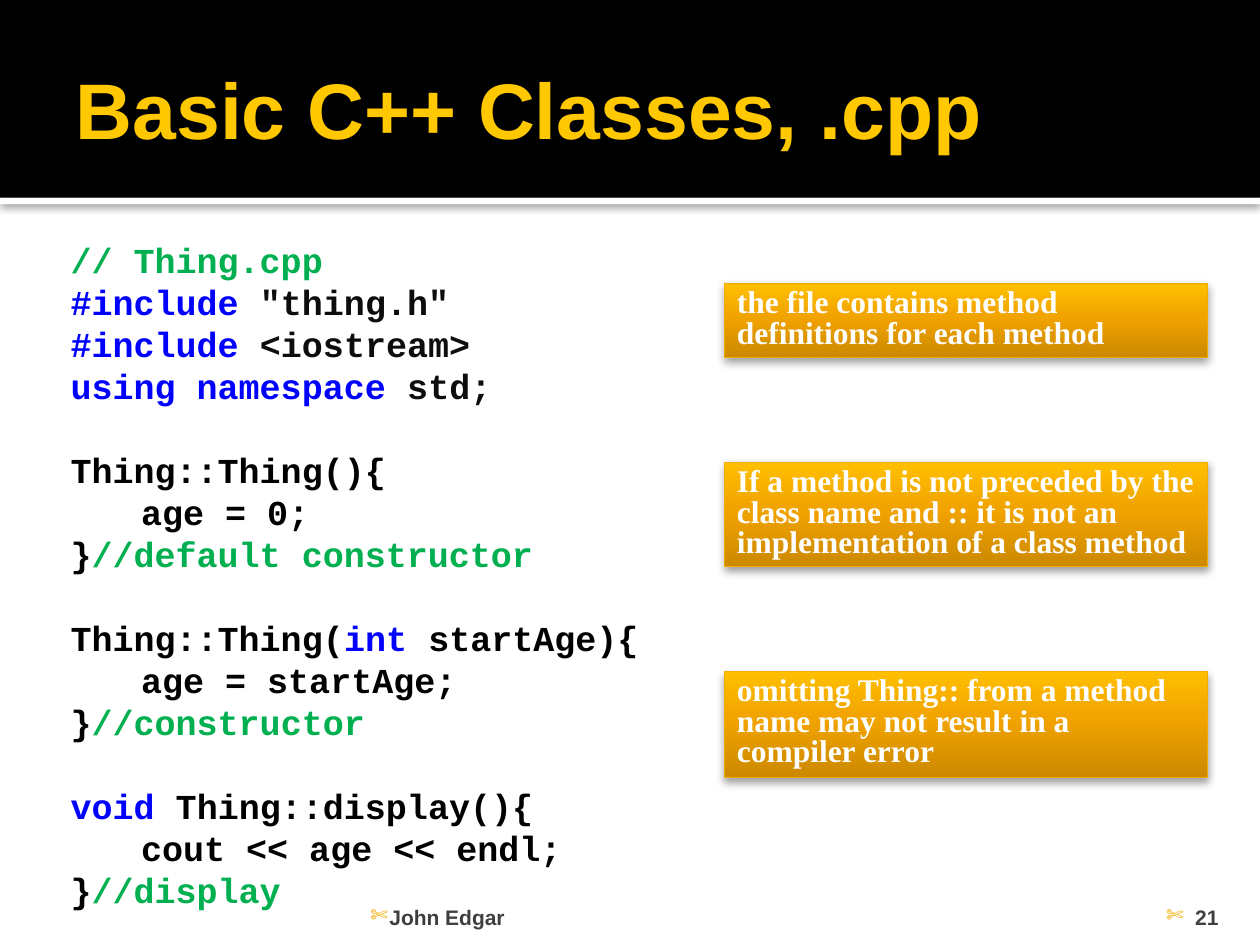
from copy import deepcopy

from lxml.etree import SubElement
from pptx import Presentation
from pptx.dml.color import RGBColor
from pptx.enum.shapes import MSO_SHAPE
from pptx.enum.text import MSO_ANCHOR, MSO_AUTO_SIZE, PP_ALIGN
from pptx.oxml.ns import qn
from pptx.util import Inches, Pt

COLORS = {
    "black": "000000", "white": "FFFFFF", "title": "FFC800",
    "comment": "00B050", "keyword": "0000FF", "soft": "0D0D0D",
    "footer": "3F3F3F", "edge": "F0AC00", "bullet": "F0AC00",
}
NOTE_STOPS = [(0, "CC8900"), (0.55, "F1A300"), (1, "FFBF00")]

# Blocks of code lines; each line is a list of (text, colour name)
CODE = [
    [
        [("// Thing.cpp", "comment")],
        [("#include ", "keyword"), ('"thing.h"', "soft")],
        [("#include", "keyword"), (" <iostream>", "soft")],
        [("using namespace", "keyword"), (" std;", "soft")],
    ],
    [
        [("Thing::Thing(){", "black")],
        [("\tage = 0;", "black")],
        [("}", "black"), ("//default constructor", "comment")],
    ],
    [
        [("Thing::Thing(", "black"), ("int", "keyword"), (" startAge){", "black")],
        [("\tage = startAge;", "black")],
        [("}", "black"), ("//constructor", "comment")],
    ],
    [
        [("void", "keyword"), (" Thing::display(){", "black")],
        [("\tcout << age << endl;", "black")],
        [("}", "black"), ("//display", "comment")],
    ],
]

# Top, height and wording of each note
NOTES = [
    (2.25, 0.59, "the file contains method definitions for each method"),
    (3.67, 0.83, "If a method is not preceded by the class name and :: "
                 "it is not an implementation of a class method"),
    (5.33, 0.84, "omitting Thing:: from a method name may not result in a compiler error"),
]


def rgb(name):
    return RGBColor.from_string(COLORS[name])


def add_span(para, text, font, size, color):
    span = para.add_run()
    span.text = text
    span.font.name = font
    span.font.size = Pt(size)
    span.font.bold = True
    span.font.color.rgb = rgb(color)


def set_frame(frame, insets, anchor=MSO_ANCHOR.TOP):
    frame.word_wrap = True
    frame.auto_size = MSO_AUTO_SIZE.NONE
    frame.vertical_anchor = anchor
    (frame.margin_left, frame.margin_top,
     frame.margin_right, frame.margin_bottom) = map(Inches, insets)


def add_box(page, left, top, width, height):
    box = page.shapes.add_shape(
        MSO_SHAPE.RECTANGLE, Inches(left), Inches(top), Inches(width), Inches(height))
    box.shadow.inherit = False
    return box


def add_shadow(box, opacity, distance):
    effects = box.element.spPr.find(qn("a:effectLst"))
    shadow = SubElement(effects, qn("a:outerShdw"), blurRad=str(Pt(5)),
                        dist=str(Pt(distance)), dir="5400000", rotWithShape="0")
    color = SubElement(shadow, qn("a:srgbClr"), val=COLORS["black"])
    SubElement(color, qn("a:alpha"), val=str(opacity * 1000))


def add_band(page, top, height, color):
    band = add_box(page, 0, top, 10, height)
    band.fill.solid()
    band.fill.fore_color.rgb = rgb(color)
    band.line.fill.background()
    return band


def add_title(page, text):
    title = page.shapes.title
    title.left, title.top = Inches(0.5), Inches(0.17)
    title.width, title.height = Inches(9), Inches(1.37)
    set_frame(title.text_frame, (0.1, 0.05, 0.05, 0.05), MSO_ANCHOR.MIDDLE)
    para = title.text_frame.paragraphs[0]
    para.alignment = PP_ALIGN.LEFT
    add_span(para, text, "Arial", 45, "title")
    # Bring the title in front of the bands
    title.element.getparent().append(title.element)


def add_code(page):
    box = page.shapes.add_textbox(Inches(0.5), Inches(1.75), Inches(8.99), Inches(5.07))
    frame = box.text_frame
    set_frame(frame, (0.06, 0.14, 0.1, 0.05))
    para = frame.paragraphs[0]
    for block_index, block in enumerate(CODE):
        for line_index, line in enumerate(block):
            if block_index or line_index:
                para = frame.add_paragraph()
            para.line_spacing = Pt(24)
            para.space_before = Pt(24 if block_index and not line_index else 0)
            tabs = SubElement(para._p.get_or_add_pPr(), qn("a:tabLst"))
            SubElement(tabs, qn("a:tab"), pos=str(Inches(0.56)), algn="l")
            for text, color in line:
                add_span(para, text, "Courier New", 20, color)


def add_note(page, top, height, text):
    note = add_box(page, 5.75, top, 3.83, height)
    note.fill.gradient()
    note.fill.gradient_angle = 90
    stops = note.element.spPr.find(qn("a:gradFill")).find(qn("a:gsLst"))
    stops.append(deepcopy(stops[-1]))
    for stop, (position, color) in zip(note.fill.gradient_stops, NOTE_STOPS):
        stop.position = position
        stop.color.rgb = RGBColor.from_string(color)
    note.line.color.rgb = rgb("edge")
    note.line.width = Pt(0.5)
    add_shadow(note, 38, 2.1)
    set_frame(note.text_frame, (0.1, 0.05, 0.1, 0.05))
    note.text_frame.auto_size = MSO_AUTO_SIZE.SHAPE_TO_FIT_TEXT
    para = note.text_frame.paragraphs[0]
    para.alignment = PP_ALIGN.LEFT
    para.line_spacing = 0.8
    add_span(para, text, "Times New Roman", 18, "white")


def add_footer(page, left, width, side_inset, indent, align, text):
    box = page.shapes.add_textbox(Inches(left), Inches(7.08), Inches(width), Inches(0.3))
    set_frame(box.text_frame, (side_inset, 0.05, side_inset, 0), MSO_ANCHOR.BOTTOM)
    para = box.text_frame.paragraphs[0]
    para.alignment = align
    # Scissors bullet with a hanging indent
    props = para._p.get_or_add_pPr()
    props.set("marL", str(Inches(indent)))
    props.set("indent", str(-Inches(indent)))
    color = SubElement(props, qn("a:buClr"))
    SubElement(color, qn("a:srgbClr"), val=COLORS["bullet"])
    SubElement(props, qn("a:buChar"), char="✄")
    add_span(para, text, "Arial", 12, "footer")


def main():
    deck = Presentation()
    deck.slide_width, deck.slide_height = Inches(10), Inches(7.5)
    page = deck.slides.add_slide(deck.slide_layouts[5])

    # Header
    add_shadow(add_band(page, 1.57, 0.05, "white"), 60, 0.8)
    add_band(page, 0, 1.57, "black")
    add_title(page, "Basic C++ Classes, .cpp")

    # Code and notes
    add_code(page)
    for top, height, text in NOTES:
        add_note(page, top, height, text)

    # Footer
    add_footer(page, 2.89, 6.02, 0.05, 0.15, PP_ALIGN.LEFT, "John Edgar")
    add_footer(page, 8.97, 0.8, 0.1, 0.23, PP_ALIGN.RIGHT, "21")

    deck.save("out.pptx")


if __name__ == "__main__":
    main()
